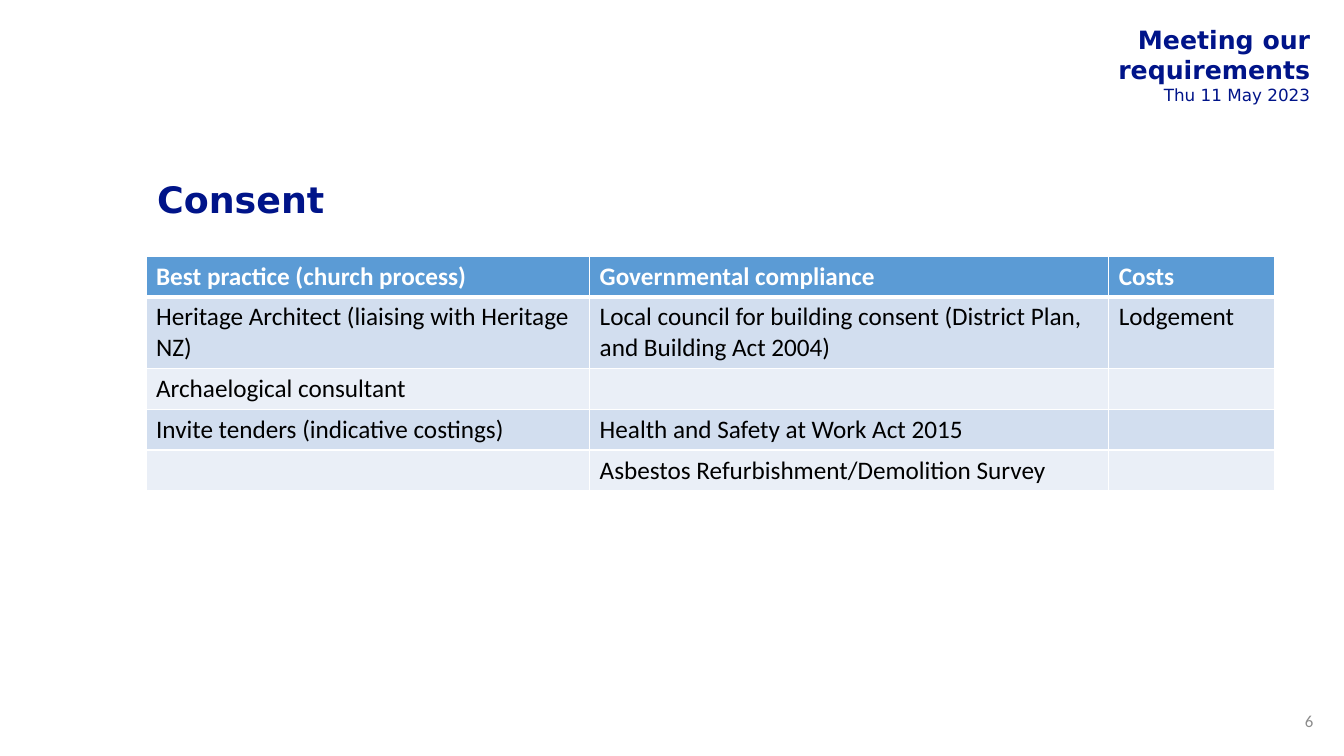
import pptx
import pptx.dml.color
import pptx.enum.text
import pptx.oxml
import pptx.oxml.ns
import pptx.util

Cm = pptx.util.Cm
Pt = pptx.util.Pt
RGBColor = pptx.dml.color.RGBColor
ALIGN = pptx.enum.text.PP_ALIGN
ANCHOR = pptx.enum.text.MSO_ANCHOR

NAVY = RGBColor(0x00, 0x14, 0x89)
GREY = RGBColor(0x8C, 0x8C, 0x8C)
WHITE = RGBColor(0xFF, 0xFF, 0xFF)
BLACK = RGBColor(0x00, 0x00, 0x00)
HEADER_BLUE = RGBColor(0x5B, 0x9B, 0xD5)
BAND_DARK = RGBColor(0xD2, 0xDE, 0xEF)
BAND_LIGHT = RGBColor(0xEA, 0xEF, 0xF7)


def write(paragraph, text, color, **font_format):
    paragraph.text = text
    paragraph.font.color.rgb = color
    for name, value in font_format.items():
        setattr(paragraph.font, name, value)


def add_text_box(left, top, width, height, **frame_format):
    frame = slide.shapes.add_textbox(Cm(left), Cm(top), Cm(width), Cm(height)).text_frame
    frame.word_wrap = True
    for name, value in frame_format.items():
        setattr(frame, name, value)
    return frame


presentation = pptx.Presentation()
presentation.slide_width = Cm(33.87)
presentation.slide_height = Cm(19.05)
slide = presentation.slides.add_slide(presentation.slide_layouts[6])

# Meeting name and date
meeting = add_text_box(23.67, 0.51, 9.53, 2.24, margin_left=Cm(0.18), margin_right=Cm(0.18),
                       margin_top=Cm(0.1), margin_bottom=Cm(0.1))
write(meeting.paragraphs[0], "Meeting our requirements", NAVY,
      name="DejaVu Sans", size=Pt(18), bold=True)
write(meeting.add_paragraph(), "Thu 11 May 2023", NAVY, name="DejaVu Sans", size=Pt(12))
for paragraph in meeting.paragraphs:
    paragraph.alignment = ALIGN.RIGHT

# Title
title = add_text_box(3.71, 3.81, 28.45, 2.57, vertical_anchor=ANCHOR.MIDDLE)
title.paragraphs[0].line_spacing = 0.9
write(title.paragraphs[0], "Consent", NAVY, name="DejaVu Sans", size=Pt(26), bold=True)

# Page number
page_number = add_text_box(32.28, 17.65, 1.07, 1.02, vertical_anchor=ANCHOR.MIDDLE)
page_number.paragraphs[0].alignment = ALIGN.RIGHT
write(page_number.paragraphs[0], "6", GREY, name="Calibri", size=Pt(12))

# Consent table
ROWS = [
    ["Best practice (church process)", "Governmental compliance", "Costs"],
    ["Heritage Architect (liaising with Heritage NZ)",
     "Local council for building consent (District Plan, and Building Act 2004)", "Lodgement"],
    ["Archaelogical consultant", "", ""],
    ["Invite tenders (indicative costings)", "Health and Safety at Work Act 2015", ""],
    ["", "Asbestos Refurbishment/Demolition Survey", ""],
]
COLUMN_WIDTHS = [11.18, 13.08, 4.19]
ROW_HEIGHTS = [1.03, 1.8, 1.03, 1.03, 1.03]

table = slide.shapes.add_table(len(ROWS), len(COLUMN_WIDTHS), Cm(3.68), Cm(6.45),
                               Cm(sum(COLUMN_WIDTHS)), Cm(sum(ROW_HEIGHTS))).table
for column, width in zip(table.columns, COLUMN_WIDTHS):
    column.width = Cm(width)
for row, height in zip(table.rows, ROW_HEIGHTS):
    row.height = Cm(height)

for row_index, texts in enumerate(ROWS):
    is_header = row_index == 0
    fill_color = HEADER_BLUE if is_header else BAND_DARK if row_index % 2 else BAND_LIGHT
    for column_index, text in enumerate(texts):
        cell = table.cell(row_index, column_index)
        write(cell.text_frame.paragraphs[0], text, WHITE if is_header else BLACK,
              name="Calibri", size=Pt(18), bold=is_header)

        # White borders, heavier between the header and the body
        heavy_side = {0: "lnB", 1: "lnT"}.get(row_index)
        properties = cell._tc.get_or_add_tcPr()
        for side in ("lnL", "lnR", "lnT", "lnB"):
            line_width = Pt(3) if side == heavy_side else Pt(1)
            properties.append(pptx.oxml.parse_xml(
                f'<a:{side} {pptx.oxml.ns.nsdecls("a")} w="{line_width}">'
                f'<a:solidFill><a:srgbClr val="{WHITE}"/></a:solidFill></a:{side}>'))
        cell.fill.solid()
        cell.fill.fore_color.rgb = fill_color

presentation.save("out.pptx")
